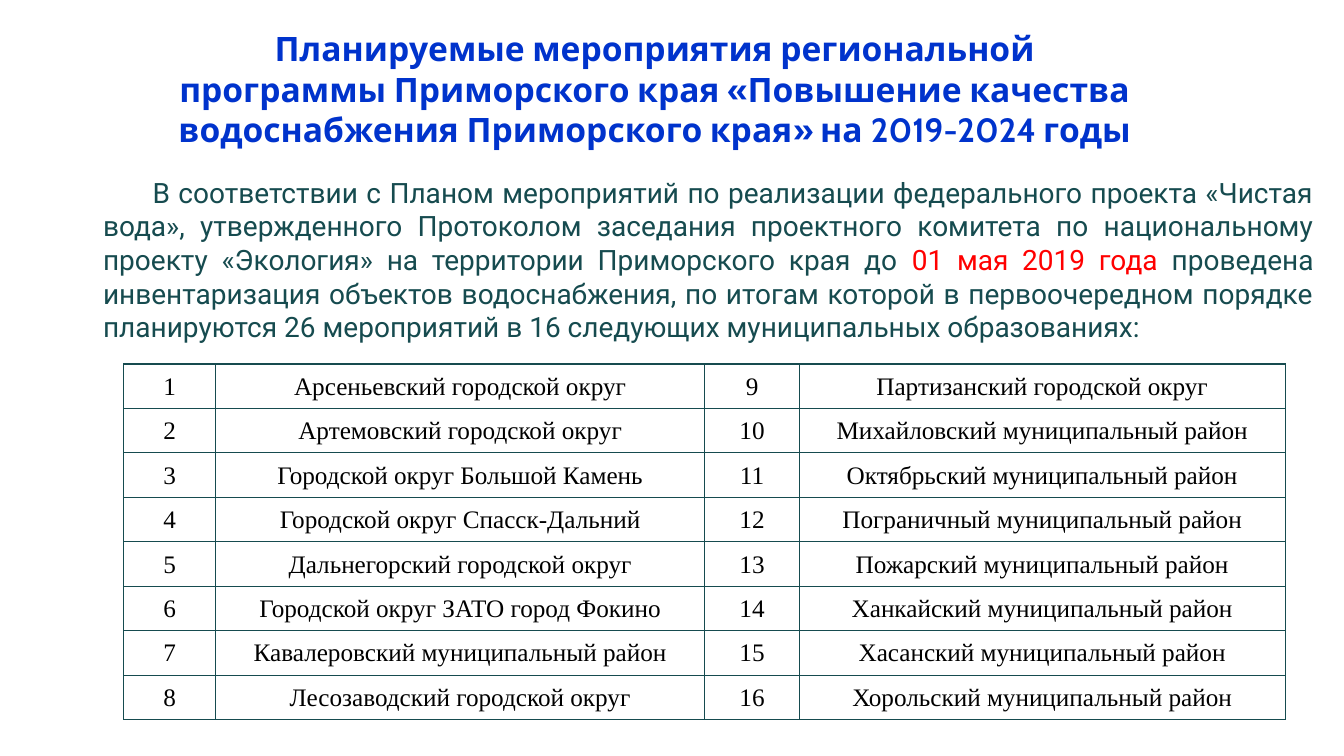
from dataclasses import dataclass

from lxml import etree
from pptx import Presentation
from pptx.dml.color import RGBColor
from pptx.enum import text as enum_text
from pptx.oxml import ns
from pptx.util import Pt


@dataclass(frozen=True)
class Style:
    font: str
    size: float
    color: str
    bold: bool = False


@dataclass(frozen=True)
class Theme:
    heading: Style = Style("Cabin", 24, "0033CC", True)
    body: Style = Style("Roboto", 20, "164B4F")
    cell: Style = Style("Times New Roman", 18, "000000")
    deadline: str = "FF0000"
    border: str = "164B4F"
    border_width: float = 1


@dataclass(frozen=True)
class Box:
    left: float
    top: float
    width: float
    height: float

    def emu(self) -> tuple:
        return Pt(self.left), Pt(self.top), Pt(self.width), Pt(self.height)


THEME = Theme()
ALIGN = enum_text.PP_ALIGN
ANCHOR = enum_text.MSO_ANCHOR

HEADING_BOX = Box(115.2, 16.5, 705, 94.5)
INTRO_BOX = Box(66.5, 121.7, 879, 128)
TABLE_BOX = Box(88.5, 260, 829.5, 254)
COLUMN_WIDTHS = (65.5, 349.5, 67.5, 347)
FIRST_LINE_INDENT = 35.4

HEADING = ("Планируемые мероприятия региональной программы Приморского края "
           "«Повышение качества водоснабжения Приморского края» на 2019-2024 годы")
INTRO = (
    ("В соответствии с Планом мероприятий по реализации федерального проекта "
     "«Чистая вода», утвержденного Протоколом заседания проектного комитета по "
     "национальному проекту «Экология» на территории Приморского края до ",
     THEME.body.color),
    ("01 мая 2019 года ", THEME.deadline),
    ("проведена инвентаризация объектов водоснабжения, по итогам которой в "
     "первоочередном порядке планируются 26 мероприятий в 16 следующих "
     "муниципальных образованиях:", THEME.body.color),
)
MUNICIPALITIES = (
    "Арсеньевский городской округ",
    "Артемовский городской округ",
    "Городской округ Большой Камень",
    "Городской округ Спасск-Дальний",
    "Дальнегорский городской округ",
    "Городской округ ЗАТО город Фокино",
    "Кавалеровский муниципальный район",
    "Лесозаводский городской округ",
    "Партизанский городской округ",
    "Михайловский муниципальный район",
    "Октябрьский муниципальный район",
    "Пограничный муниципальный район",
    "Пожарский муниципальный район",
    "Ханкайский муниципальный район",
    "Хасанский муниципальный район",
    "Хорольский муниципальный район",
)


def format_paragraph(paragraph, style: Style, align) -> None:
    paragraph.alignment = align
    paragraph.font.name = style.font
    paragraph.font.size = Pt(style.size)
    paragraph.font.bold = style.bold
    paragraph.font.color.rgb = RGBColor.from_string(style.color)


def add_heading(slide) -> None:
    heading = slide.shapes.title
    heading.left, heading.top, heading.width, heading.height = HEADING_BOX.emu()
    frame = heading.text_frame
    frame.text = HEADING
    frame.word_wrap = True
    frame.auto_size = enum_text.MSO_AUTO_SIZE.NONE
    frame.vertical_anchor = ANCHOR.TOP
    format_paragraph(frame.paragraphs[0], THEME.heading, ALIGN.CENTER)


def add_intro(slide) -> None:
    frame = slide.shapes.add_textbox(*INTRO_BOX.emu()).text_frame
    frame.word_wrap = True
    paragraph = frame.paragraphs[0]
    paragraph._p.get_or_add_pPr().set("indent", str(Pt(FIRST_LINE_INDENT)))
    format_paragraph(paragraph, THEME.body, ALIGN.JUSTIFY)
    for words, color in INTRO:
        run = paragraph.add_run()
        run.text = words
        run.font.color.rgb = RGBColor.from_string(color)


def add_borders(cell) -> None:
    properties = cell._tc.get_or_add_tcPr()
    for position, side in enumerate(("lnL", "lnR", "lnT", "lnB")):
        line = etree.Element(ns.qn(f"a:{side}"), w=str(Pt(THEME.border_width)))
        fill = etree.SubElement(line, ns.qn("a:solidFill"))
        etree.SubElement(fill, ns.qn("a:srgbClr"), val=THEME.border)
        properties.insert(position, line)


def fill_cell(cell, words: str) -> None:
    cell.text = words
    cell.fill.background()
    cell.vertical_anchor = ANCHOR.MIDDLE
    cell.margin_left = cell.margin_right = cell.margin_top = Pt(0.7)
    cell.margin_bottom = Pt(0)
    format_paragraph(cell.text_frame.paragraphs[0], THEME.cell, ALIGN.CENTER)
    add_borders(cell)


def add_municipalities(slide) -> None:
    row_count = len(MUNICIPALITIES) // 2
    table = slide.shapes.add_table(
        row_count, len(COLUMN_WIDTHS), *TABLE_BOX.emu()).table
    table.first_row = table.horz_banding = False
    for column, width in zip(table.columns, COLUMN_WIDTHS):
        column.width = Pt(width)
    for row in table.rows:
        row.height = Pt(TABLE_BOX.height / row_count)
    # Numbers run down the left half, then down the right half
    for index, municipality in enumerate(MUNICIPALITIES):
        half, row_index = divmod(index, row_count)
        fill_cell(table.cell(row_index, 2 * half), str(index + 1))
        fill_cell(table.cell(row_index, 2 * half + 1), municipality)


def main() -> None:
    deck = Presentation()
    deck.slide_width, deck.slide_height = Pt(960), Pt(540)
    slide = deck.slides.add_slide(deck.slide_layouts[5])
    add_heading(slide)
    add_intro(slide)
    add_municipalities(slide)
    deck.save("out.pptx")


if __name__ == "__main__":
    main()
